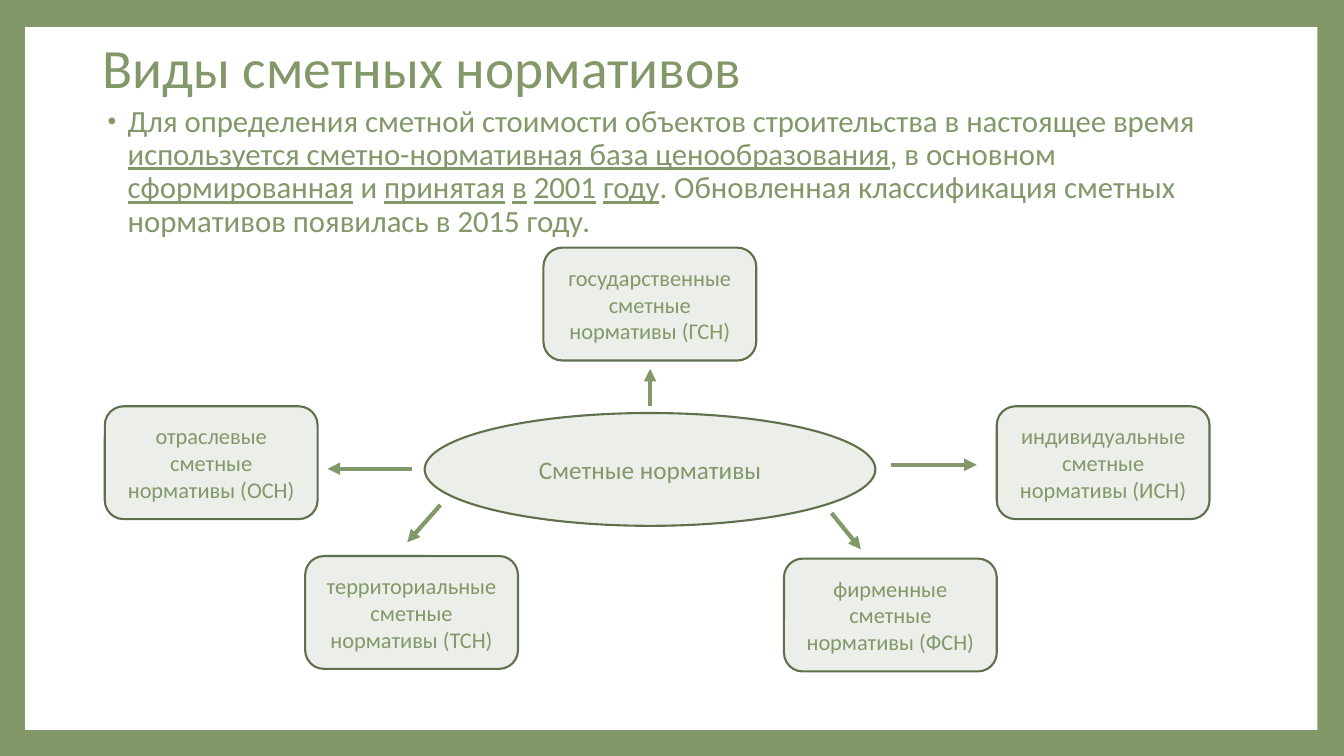
"""Build the slide on the kinds of estimate norms."""
from lxml import etree
from pptx import Presentation
from pptx.dml.color import RGBColor
from pptx.enum.shapes import MSO_CONNECTOR, MSO_SHAPE
from pptx.enum.text import MSO_ANCHOR, MSO_AUTO_SIZE, PP_ALIGN
from pptx.oxml.ns import qn
from pptx.util import Pt

GREEN = RGBColor(0x82, 0x98, 0x68)
DARK_GREEN = RGBColor(0x60, 0x70, 0x4D)
PALE_GREEN = RGBColor(0xEC, 0xEF, 0xE9)
WHITE = RGBColor(0xFF, 0xFF, 0xFF)
FONT = "Calibri"
RECTANGLE, ROUNDED, OVAL = MSO_SHAPE.RECTANGLE, MSO_SHAPE.ROUNDED_RECTANGLE, MSO_SHAPE.OVAL
STRAIGHT = MSO_CONNECTOR.STRAIGHT
LEFT, CENTER = PP_ALIGN.LEFT, PP_ALIGN.CENTER
TOP, MIDDLE = MSO_ANCHOR.TOP, MSO_ANCHOR.MIDDLE
NO_AUTOFIT = MSO_AUTO_SIZE.NONE
NODE_WIDTH, NODE_HEIGHT = 152, 80.6


def write(shape, runs, size, align, anchor):
    frame = shape.text_frame
    frame.word_wrap = True
    frame.auto_size = NO_AUTOFIT
    frame.vertical_anchor = anchor
    para = frame.paragraphs[0]
    para.alignment = align
    for text, underlined in runs:
        span = para.add_run()
        span.text = text
        span.font.name = FONT
        span.font.size = Pt(size)
        span.font.color.rgb = GREEN
        if underlined:
            span.font.underline = True
    return para


def add_node(kind, left, top, width, text, size):
    node = page.shapes.add_shape(kind, Pt(left), Pt(top), Pt(width), Pt(NODE_HEIGHT))
    node.shadow.inherit = False
    node.fill.solid()
    node.fill.fore_color.rgb = PALE_GREEN
    node.line.color.rgb = DARK_GREEN
    node.line.width = Pt(1.5)
    write(node, [(text, False)], size, CENTER, MIDDLE)


deck = Presentation()
deck.slide_width, deck.slide_height = Pt(960), Pt(540)
page = deck.slides.add_slide(deck.slide_layouts[1])
page.background.fill.solid()
page.background.fill.fore_color.rgb = GREEN

panel = page.shapes.add_shape(RECTANGLE, Pt(18), Pt(19.4), Pt(923), Pt(502))
panel.shadow.inherit = False
panel.fill.solid()
panel.fill.fore_color.rgb = WHITE
panel.line.fill.background()
page.shapes.element.insert(2, panel.element)

title, body = page.placeholders
title.left, title.top, title.width, title.height = Pt(66), Pt(28.8), Pt(828), Pt(43.2)
heading = write(title, [("Виды сметных нормативов", False)], 39.6, LEFT, MIDDLE)
heading.line_spacing = 0.9

body.left, body.top, body.width, body.height = Pt(66), Pt(72), Pt(828), Pt(414.7)
intro = write(body, [
    ("Для определения сметной стоимости объектов строительства в настоящее время ", False),
    ("используется сметно-нормативная база ценообразования", True),
    (", в основном ", False),
    ("сформированная", True),
    (" и ", False),
    ("принятая", True),
    (" ", False),
    ("в", True),
    (" ", False),
    ("2001", True),
    (" ", False),
    ("году", True),
    (". Обновленная классификация сметных нормативов появилась в 2015 году.", False),
], 22, LEFT, TOP)
intro.line_spacing = 0.9
intro.space_before = Pt(0)
properties = intro._p.get_or_add_pPr()
properties.set("marL", str(Pt(18)))
properties.set("indent", str(Pt(-14.4)))
bullet_color = etree.SubElement(properties, qn("a:buClr"))
etree.SubElement(bullet_color, qn("a:srgbClr"), val=str(GREEN))
etree.SubElement(properties, qn("a:buSzPct"), val="80000")
etree.SubElement(properties, qn("a:buFont"), typeface="Arial")
etree.SubElement(properties, qn("a:buChar"), char="•")

for left, top, name in [
    (74.9, 290.2, "отраслевые сметные нормативы (ОСН)"),
    (712, 290.2, "индивидуальные сметные нормативы (ИСН)"),
    (218, 397.2, "территориальные сметные нормативы (ТСН)"),
    (560, 399, "фирменные сметные нормативы (ФСН)"),
    (388.2, 176.9, "государственные сметные нормативы (ГСН)"),
]:
    add_node(ROUNDED, left, top, NODE_WIDTH, name, 16)
add_node(OVAL, 303.3, 295, 322, "Сметные нормативы", 18)

for start_x, start_y, end_x, end_y in [
    (464.4, 290.2, 464.4, 263.5),
    (314.6, 360.7, 290.9, 387.4),
    (594, 366.5, 614.9, 392.4),
    (294.5, 334.8, 234, 334.8),
    (636.5, 332, 697.7, 332),
]:
    arrow = page.shapes.add_connector(STRAIGHT, Pt(start_x), Pt(start_y), Pt(end_x), Pt(end_y))
    arrow.line.color.rgb = GREEN
    arrow.line.width = Pt(3)
    etree.SubElement(arrow.line._get_or_add_ln(), qn("a:tailEnd"), type="triangle")
    etree.SubElement(arrow._element.spPr, qn("a:effectLst"))

deck.save("out.pptx")
